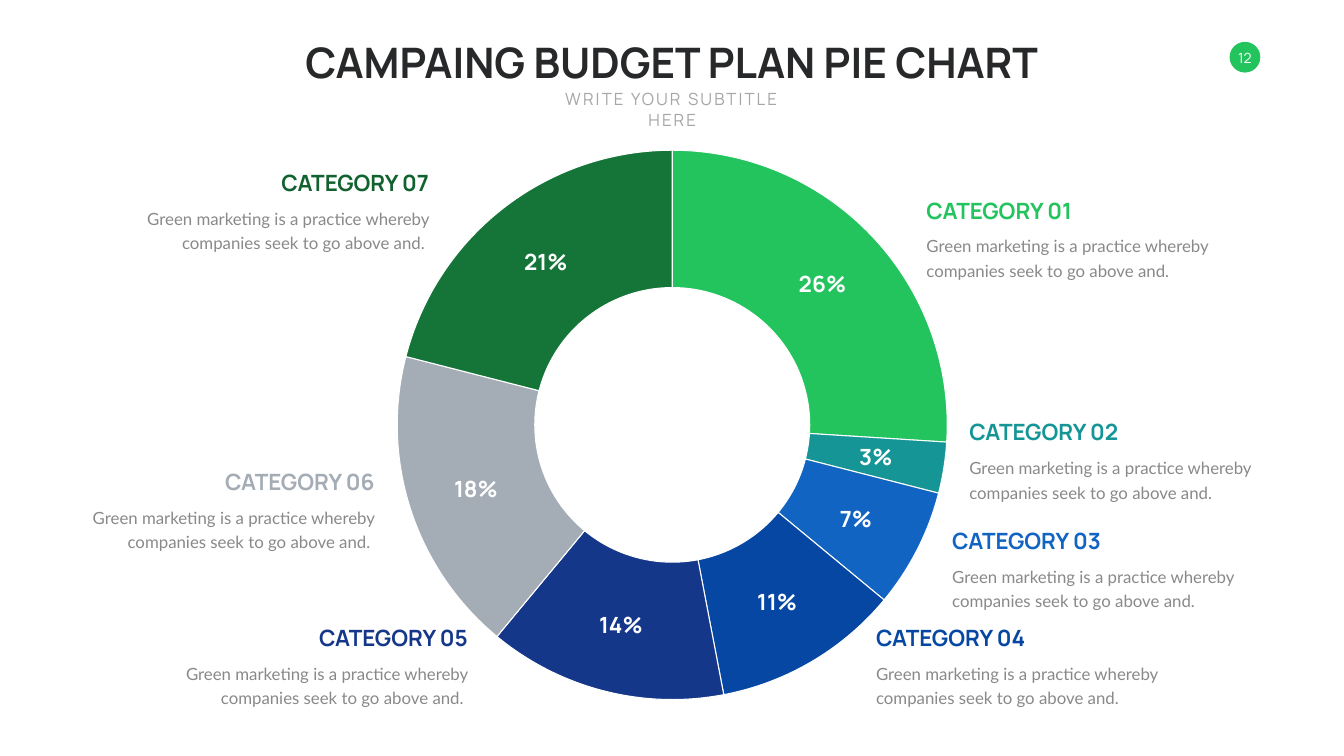
from pptx import Presentation
from pptx.chart.data import CategoryChartData
from pptx.dml.color import RGBColor
from pptx.enum.chart import XL_CHART_TYPE as ChartType
from pptx.enum.shapes import MSO_SHAPE as Shape
from pptx.enum.text import MSO_ANCHOR as Anchor, MSO_AUTO_SIZE as AutoSize, PP_ALIGN as Align
from pptx.oxml import parse_xml
from pptx.oxml.ns import nsdecls, qn
from pptx.util import Inches, Pt

COLORS = {
    "white": "FFFFFF",
    "title": "272829",
    "subtitle": "A6A6A6",
    "body": "898989",
    "green": "23C35E",
    "teal": "159596",
    "blue": "1264C3",
    "royal": "0547A3",
    "navy": "153789",
    "gray": "A4ACB5",
    "forest": "157538",
    "dark forest": "11622F",
}
HEADING_FONT = "Manrope"
BODY_FONT = "Lato"
DESCRIPTION = "Green marketing is a practice whereby companies seek to go above and."
DESCRIPTION_WIDTH = 5.87

# share, slice color, heading color, left, top, heading width, side of the ring
CATEGORIES = [
    (26, "green", "green", 18.28, 3.85, 3.23, "right"),
    (3, "teal", "teal", 19.13, 8.25, 3.31, "right"),
    (7, "blue", "blue", 18.79, 10.4, 3.33, "right"),
    (11, "royal", "royal", 17.28, 12.33, 3.36, "right"),
    (14, "navy", "navy", 3.51, 12.33, 3.35, "left"),
    (18, "gray", "gray", 1.66, 9.23, 3.34, "left"),
    (21, "forest", "dark forest", 2.74, 3.3, 3.3, "left"),
]


def rgb(name):
    return RGBColor.from_string(COLORS[name])


def style_font(font, size, color, name=HEADING_FONT, bold=False):
    font.size = Pt(size)
    font.name = name
    font.bold = bold
    font.color.rgb = rgb(color)


def add_text(page, text, left, top, width, height, *, size, color, font=HEADING_FONT,
             bold=False, align=Align.LEFT, anchor=Anchor.TOP, wrap=False,
             line_spacing=None, tracking=None, inset=None):
    box = page.shapes.add_textbox(Inches(left), Inches(top), Inches(width), Inches(height))
    frame = box.text_frame
    frame.word_wrap = wrap
    frame.auto_size = AutoSize.SHAPE_TO_FIT_TEXT
    frame.vertical_anchor = anchor
    if inset is not None:
        frame.margin_left = frame.margin_right = Inches(inset)
        frame.margin_top = frame.margin_bottom = Inches(inset)
    para = frame.paragraphs[0]
    para.alignment = align
    if line_spacing:
        para.line_spacing = Pt(line_spacing)
    span = para.add_run()
    span.text = text
    style_font(span.font, size, color, font, bold)
    if tracking:
        span._r.get_or_add_rPr().set("spc", str(tracking * 100))


def add_page_number(page):
    badge = page.shapes.add_shape(
        Shape.OVAL, Inches(24.39), Inches(0.83), Inches(0.61), Inches(0.61))
    badge.shadow.inherit = False
    badge.fill.solid()
    badge.fill.fore_color.rgb = rgb("green")
    badge.line.fill.background()
    add_text(page, "12", 24.49, 0.97, 0.41, 0.34, size=20, color="white",
             align=Align.CENTER, anchor=Anchor.MIDDLE, inset=0)


def fill_plot_area(chart):
    """Stretch the ring over the whole chart frame."""
    area = chart._chartSpace.find(".//" + qn("c:plotArea"))
    for layout in area.findall(qn("c:layout")):
        area.remove(layout)
    area.insert(0, parse_xml(
        f'<c:layout {nsdecls("c")}><c:manualLayout><c:layoutTarget val="inner"/>'
        '<c:xMode val="edge"/><c:yMode val="edge"/><c:x val="0"/><c:y val="0"/>'
        '<c:w val="1"/><c:h val="1"/></c:manualLayout></c:layout>'))
    area.find(".//" + qn("c:holeSize")).set("val", "60")


def add_budget_ring(page):
    data = CategoryChartData()
    data.categories = [str(number) for number in range(1, len(CATEGORIES) + 1)]
    data.add_series("Series 1", [category[0] for category in CATEGORIES])
    chart = page.shapes.add_chart(
        ChartType.DOUGHNUT, Inches(7.87), Inches(2.97), Inches(10.93), Inches(10.92), data).chart
    chart.has_legend = False
    chart.has_title = False
    style_font(chart.font, 32, "white", bold=True)
    plot = chart.plots[0]
    plot.vary_by_categories = True
    series = plot.series[0]
    for index, (_, color, *_) in enumerate(CATEGORIES):
        ring_slice = series.points[index].format
        ring_slice.fill.solid()
        ring_slice.fill.fore_color.rgb = rgb(color)
        ring_slice.line.color.rgb = rgb("white")
        ring_slice.line.width = Pt(1.5)
    labels = series.data_labels
    labels.show_percentage = True
    labels.show_value = False
    labels.number_format = "0%"
    labels.number_format_is_linked = False
    style_font(labels.font, 32, "white", bold=True)
    fill_plot_area(chart)


def add_category(page, number, color, left, top, width, side):
    """Heading over a description, both aligned to the edge facing the ring."""
    on_left = side == "left"
    align = Align.RIGHT if on_left else Align.LEFT
    heading_left = left + DESCRIPTION_WIDTH - width if on_left else left
    add_text(page, f"CATEGORY {number:02}", heading_left, top, width, 0.64,
             size=32, color=color, bold=True, align=align, anchor=Anchor.MIDDLE)
    add_text(page, DESCRIPTION + (" " if on_left else ""), left, top + 0.7,
             DESCRIPTION_WIDTH, 1.03, size=24, color="body", font=BODY_FONT,
             align=align, wrap=True, line_spacing=35)


def main():
    deck = Presentation()
    deck.slide_width, deck.slide_height = Inches(26.66), Inches(15)
    page = deck.slides.add_slide(deck.slide_layouts[6])
    add_page_number(page)
    add_budget_ring(page)
    add_text(page, "CAMPAING BUDGET PLAN PIE CHART", 5.67, 0.67, 15.31, 1.11,
             size=60, color="title", bold=True, align=Align.CENTER)
    add_text(page, "WRITE YOUR SUBTITLE HERE", 10.62, 1.72, 5.43, 0.5,
             size=24, color="subtitle", align=Align.CENTER, wrap=True, tracking=3)
    for number, (_, _, color, *place) in enumerate(CATEGORIES, start=1):
        add_category(page, number, color, *place)
    deck.save("out.pptx")


if __name__ == "__main__":
    main()
